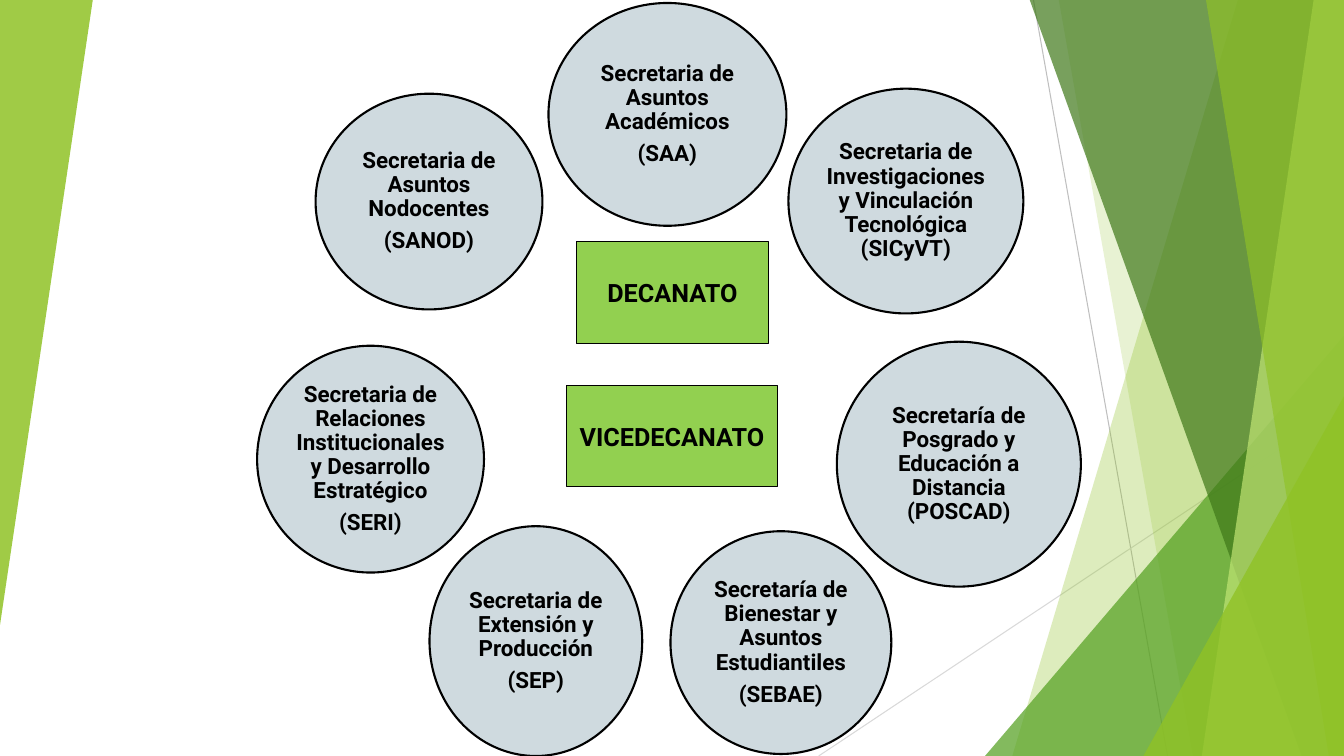
from lxml import etree
from pptx import Presentation
from pptx import util as u
from pptx.dml import color
from pptx.enum import shapes, text
from pptx.oxml import ns

WIDE, HIGH = 13.33, 7.5
KIND = shapes.MSO_SHAPE

# Content: secretariat paragraphs, then left, top, width, height
RING = [
    (["Secretaria de Asuntos Académicos", "(SAA)"], (5.44, 0.03, 2.36, 2.21)),
    (["Secretaria de Investigaciones y Vinculación Tecnológica (SICyVT)"],
     (7.82, 0.88, 2.33, 2.23)),
    (["Secretaría de Posgrado y Educación a Distancia (POSCAD)"],
     (8.3, 3.39, 2.42, 2.43)),
    (["Secretaría de Bienestar y Asuntos Estudiantiles", "(SEBAE)"],
     (6.65, 5.27, 2.19, 2.21)),
    (["Secretaria de Extensión y Producción", "(SEP)"], (4.26, 5.22, 2.11, 2.28)),
    (["Secretaria de Relaciones Institucionales y Desarrollo Estratégico", "(SERI)"],
     (2.55, 3.43, 2.25, 2.25)),
    (["Secretaria de Asuntos Nodocentes", "(SANOD)"], (3.13, 0.93, 2.25, 2.14)),
]
CORE = [
    (["DECANATO"], (5.72, 2.4, 1.9, 1.01)),
    (["VICEDECANATO"], (5.62, 3.82, 2.09, 1.01)),
]

# Backdrop: rays, then facets from back to front
RAYS = [((10.25, 0), (11.58, HIGH), "BFBFBF"), ((WIDE, 4.03), (8.12, HIGH), "D9D9D9")]
FACETS = [  # band: x at top, x at foot; wedge: box, turn
    ("band", (12.28, 10.04), "90C226", 30),
    ("band", (10.5, 11.83), "90C226", 20),
    ("wedge", ((9.77, 3.33, 3.56, 4.17), 0), "54A021", 72),
    ("band", (10.21, 12.91), "3F7819", 70),
    ("band", (13.03, 11.92), "C0E474", 70),
    ("band", (11.96, 13.18), "90C226", 65),
    ("wedge", ((11.34, 3.93, 1.99, 3.57), 0), "90C226", 80),
    ("wedge", ((0, 0, 0.92, 6.2), 180), "90C226", 85),
]
DISC = dict(kind=KIND.OVAL, fill="CFDADF", edge=1.5, size=16, pad=0.02)
BLOCK = dict(kind=KIND.RECTANGLE, fill="92D050", edge=0.75, size=18, pad=0.1)


def rgb(code):
    return color.RGBColor.from_string(code)


def inch(nums):
    return [u.Inches(n) for n in nums]


def paint(shape, code, alpha=100):
    shape.shadow.inherit = False
    shape.fill.solid()
    shape.fill.fore_color.rgb = rgb(code)
    if alpha < 100:
        hue = shape.fill._xPr.find(".//" + ns.qn("a:srgbClr"))
        etree.SubElement(hue, ns.qn("a:alpha")).set("val", str(alpha * 1000))


def ray(start, end, code):
    line = page.shapes.add_connector(
        shapes.MSO_CONNECTOR.STRAIGHT, *inch(start + end))
    line.line.color.rgb = rgb(code)
    line.line.width = u.Pt(0.75)
    etree.SubElement(line._element.spPr, ns.qn("a:effectLst"))


def facet(form, place, code, alpha):
    if form == "band":
        top, foot = place
        pen = page.shapes.build_freeform(*inch((top, -0.01)), scale=1.0)
        pen.add_line_segments(
            [inch(p) for p in ((WIDE, -0.01), (WIDE, HIGH), (foot, HIGH))], close=True)
        shape = pen.convert_to_shape()
    else:
        box, turn = place
        shape = page.shapes.add_shape(KIND.ISOSCELES_TRIANGLE, *inch(box))
        shape.adjustments[0] = 1
        shape.rotation = turn
    paint(shape, code, alpha)
    shape.line.fill.background()


def label(lines, box, look):
    shape = page.shapes.add_shape(look["kind"], *inch(box))
    paint(shape, look["fill"])
    shape.line.color.rgb = rgb("000000")
    shape.line.width = u.Pt(look["edge"])
    frame = shape.text_frame
    pad = u.Inches(look["pad"])
    for key, val in dict(word_wrap=True, vertical_anchor=text.MSO_ANCHOR.MIDDLE,
                         margin_left=pad, margin_right=pad,
                         margin_top=pad, margin_bottom=pad).items():
        setattr(frame, key, val)
    for i, words in enumerate(lines):
        para = frame.add_paragraph() if i else frame.paragraphs[0]
        para.alignment = text.PP_ALIGN.CENTER
        if look is DISC:
            para.line_spacing = 0.9
            para.space_after = u.Pt(5.6)
        run = para.add_run()
        run.text = words
        for key, val in dict(name="Roboto", size=u.Pt(look["size"]), bold=True).items():
            setattr(run.font, key, val)
        run.font.color.rgb = rgb("000000")


deck = Presentation()
deck.slide_width, deck.slide_height = inch((WIDE, HIGH))
page = deck.slides.add_slide(deck.slide_layouts[6])

# Backdrop
for item in RAYS:
    ray(*item)
for item in FACETS:
    facet(*item)

# Ring of secretariats around the two central offices
for group, look in ((RING, DISC), (CORE, BLOCK)):
    for lines, box in group:
        label(lines, box, look)

deck.save("out.pptx")
